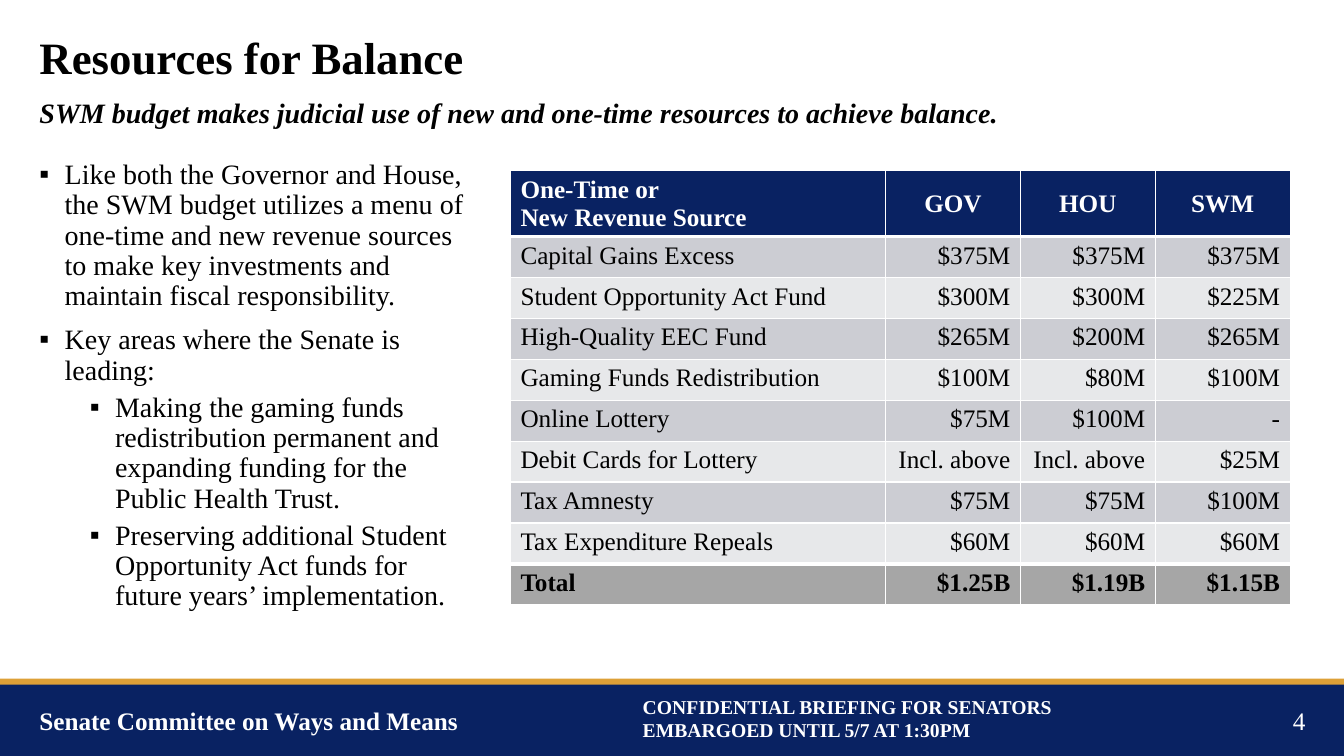
from pptx import Presentation
from pptx.dml.color import RGBColor
from pptx.enum.shapes import MSO_SHAPE as Shape
from pptx.enum.text import MSO_ANCHOR as Anchor, MSO_AUTO_SIZE as Fit, PP_ALIGN as Align
from pptx.oxml.ns import qn
from pptx.util import Pt
from lxml.etree import SubElement as Sub

NAVY = RGBColor(0x09, 0x22, 0x62)
GOLD = RGBColor(0xDD, 0xA0, 0x37)
WHITE = RGBColor(0xFF, 0xFF, 0xFF)
BLACK = RGBColor(0, 0, 0)
DARK = RGBColor(0xCC, 0xCD, 0xD3)
LIGHT = RGBColor(0xE7, 0xE8, 0xEA)
GRAY = RGBColor(0xA6, 0xA6, 0xA6)
FACE = "Times New Roman"
WIDE, HIGH = 960, 540

POINTS = [
    (0, "Like both the Governor and House, the SWM budget utilizes a menu of "
        "one-time and new revenue sources to make key investments and "
        "maintain fiscal responsibility."),
    (0, "Key areas where the Senate is leading:"),
    (1, "Making the gaming funds redistribution permanent and expanding "
        "funding for the Public Health Trust."),
    (1, "Preserving additional Student Opportunity Act funds for future "
        "years’ implementation."),
]
ROWS = [
    ("One-Time or\nNew Revenue Source", "GOV", "HOU", "SWM"),
    ("Capital Gains Excess", "$375M", "$375M", "$375M"),
    ("Student Opportunity Act Fund", "$300M", "$300M", "$225M"),
    ("High-Quality EEC Fund", "$265M", "$200M", "$265M"),
    ("Gaming Funds Redistribution", "$100M", "$80M", "$100M"),
    ("Online Lottery", "$75M", "$100M", "-"),
    ("Debit Cards for Lottery", "Incl. above", "Incl. above", "$25M"),
    ("Tax Amnesty", "$75M", "$75M", "$100M"),
    ("Tax Expenditure Repeals", "$60M", "$60M", "$60M"),
    ("Total", "$1.25B", "$1.19B", "$1.15B"),
]


def style(para, size, color, bold=False, align=Align.LEFT, italic=False):
    para.alignment = align
    font = para.font
    font.name, font.size = FACE, Pt(size)
    font.bold, font.italic = bold, italic
    font.color.rgb = color


def place(shape, box):
    shape.left, shape.top, shape.width, shape.height = map(Pt, box)


def bar(slide, box, color):
    rect = slide.shapes.add_shape(Shape.RECTANGLE, *map(Pt, box))
    rect.shadow.inherit = False
    rect.fill.solid()
    rect.fill.fore_color.rgb = color
    rect.line.fill.background()


def label(slide, box, text, size, bold=True, align=Align.LEFT):
    frame = slide.shapes.add_textbox(*map(Pt, box)).text_frame
    frame.word_wrap = True
    frame.text = text
    for para in frame.paragraphs:
        style(para, size, WHITE, bold, align)


def footer(slide, box):
    left, top, width, height = box
    bar(slide, box, NAVY)
    bar(slide, (left, top - 2, width, 4.3), GOLD)
    label(slide, (left + 21, top + 13.5, 431, 29),
          "Senate Committee on Ways and Means", 18)
    label(slide, (left + 452, top + 6, 316, 41),
          "CONFIDENTIAL BRIEFING FOR SENATORS\nEMBARGOED UNTIL 5/7 AT 1:30PM", 14)
    label(slide, (left + width - 76, top + 13.5, 55.5, 29), "4", 18, False, Align.RIGHT)


def heading(shape, box, text, size, italic=False):
    place(shape, box)
    frame = shape.text_frame
    frame.text = text
    frame.auto_size = Fit.NONE
    frame.vertical_anchor = Anchor.MIDDLE
    para = frame.paragraphs[0]
    para.line_spacing, para.space_before = 0.9, Pt(0)
    props = para._p.get_or_add_pPr()
    props.set("marL", "0")
    props.set("indent", "0")
    Sub(props, qn("a:buNone"))
    style(para, size, BLACK, True, italic=italic)


def bullets(shape, box):
    place(shape, box)
    frame = shape.text_frame
    frame.auto_size = Fit.NONE
    frame.vertical_anchor = Anchor.TOP
    frame.text = "\n".join(text for _, text in POINTS)
    for num, (para, (level, _)) in enumerate(zip(frame.paragraphs, POINTS)):
        para.level = level
        para.line_spacing = 0.9
        para.space_before = Pt((5 if level else 10) if num else 0)
        props = para._p.get_or_add_pPr()
        props.set("marL", str(Pt(18 + 36 * level)))
        props.set("indent", str(-Pt(18)))
        Sub(props, qn("a:buChar"), char="▪")
        style(para, 20, BLACK)


def borders(cell, upper, lower):
    props = cell._tc.get_or_add_tcPr()
    for side, width in (("L", 1), ("R", 1), ("T", upper), ("B", lower)):
        line = Sub(props, qn("a:ln" + side), w=str(Pt(width)))
        Sub(Sub(line, qn("a:solidFill")), qn("a:srgbClr"), val=str(WHITE))


def sources(slide, box):
    last = len(ROWS) - 1
    grid = slide.shapes.add_table(len(ROWS), 4, *map(Pt, box)).table
    grid.horz_banding = False
    head, first = 45.7, 268
    for num, col in enumerate(grid.columns):
        col.width = Pt((box[2] - first) / 3 if num else first)
    for num, row in enumerate(grid.rows):
        row.height = Pt((box[3] - head) / last if num else head)
        top, total = num == 0, num == last
        fill = NAVY if top else GRAY if total else DARK if num % 2 else LIGHT
        for pos, cell in enumerate(row.cells):
            borders(cell, 3 if num in (1, last) else 1, 3 if num in (0, last - 1) else 1)
            cell.fill.solid()
            cell.fill.fore_color.rgb = fill
            cell.text = ROWS[num][pos]
            if top:
                cell.margin_top = cell.margin_bottom = Pt(2)
                cell.vertical_anchor = Anchor.MIDDLE
            align = Align.LEFT if pos == 0 else Align.CENTER if top else Align.RIGHT
            for para in cell.text_frame.paragraphs:
                style(para, 18, WHITE if top else BLACK, top or total, align)


def balance(deck):
    slide = deck.slides.add_slide(deck.slide_layouts[3])
    title, lead, body = slide.placeholders
    # Footer band
    footer(slide, (0, 486.7, WIDE, HIGH - 486.7))
    # Title and lead line
    heading(title, (21, 18, 851, 49), "Resources for Balance", 32)
    heading(lead, (21, 67.7, 880, 27.4),
            "SWM budget makes judicial use of new and one-time resources "
            "to achieve balance.", 20, True)
    # Key points
    bullets(body, (21, 111, 325.5, 367))
    # Revenue table
    sources(slide, (364.6, 121.8, 557, 308.8))


def main():
    deck = Presentation()
    deck.slide_width, deck.slide_height = Pt(WIDE), Pt(HIGH)
    balance(deck)
    deck.save("out.pptx")


if __name__ == "__main__":
    main()
